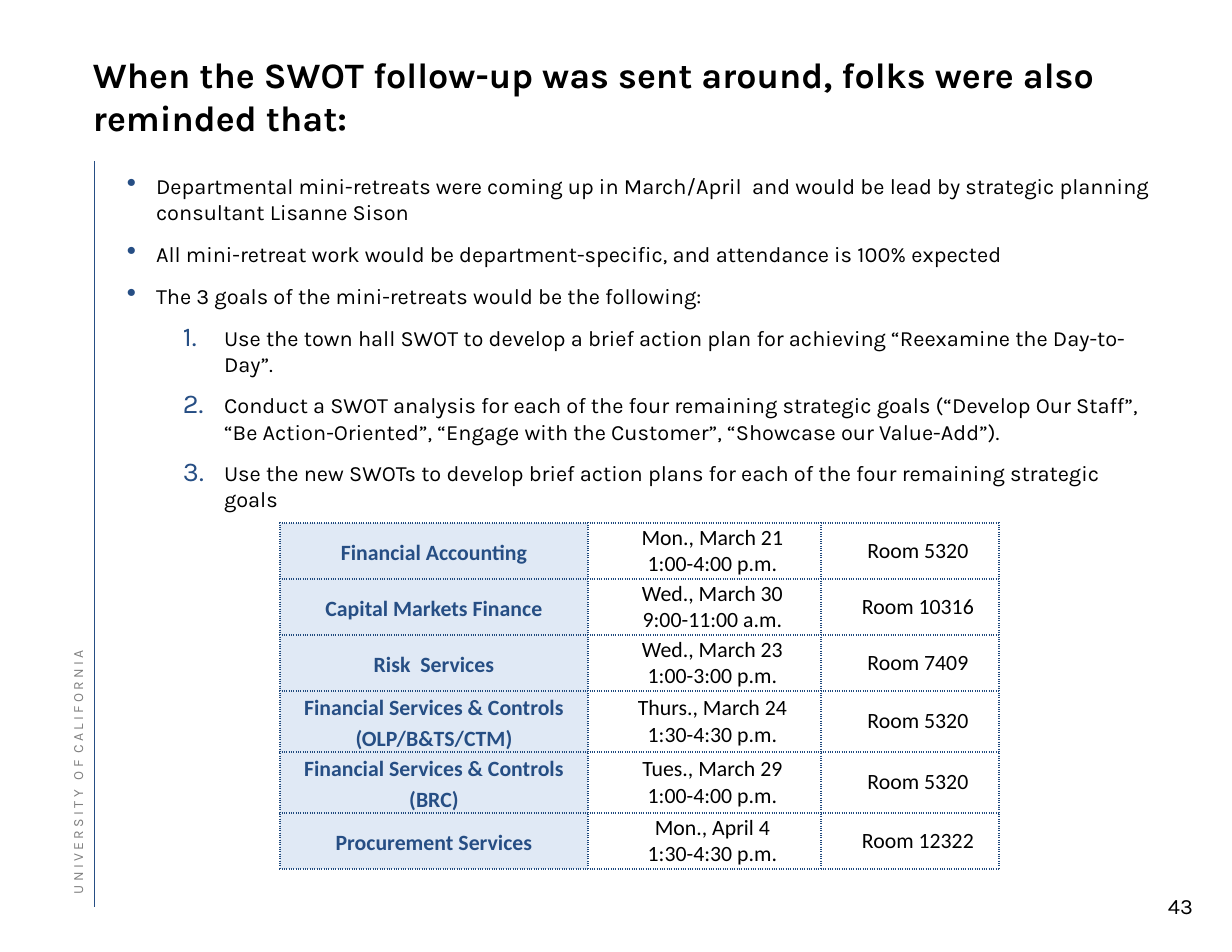
"""Build the slide on mini-retreat reminders and their schedule."""
from lxml import etree
from pptx import Presentation
from pptx.dml.color import RGBColor
from pptx.enum.shapes import MSO_CONNECTOR
from pptx.enum.text import MSO_ANCHOR, MSO_AUTO_SIZE, PP_ALIGN
from pptx.oxml.ns import qn
from pptx.util import Emu, Pt

LEFT, CENTER, RIGHT = PP_ALIGN.LEFT, PP_ALIGN.CENTER, PP_ALIGN.RIGHT
TOP, MIDDLE, BOTTOM = MSO_ANCHOR.TOP, MSO_ANCHOR.MIDDLE, MSO_ANCHOR.BOTTOM
NO_FIT = MSO_AUTO_SIZE.NONE
STRAIGHT = MSO_CONNECTOR.STRAIGHT

EMU_PER_PX = 914400 / 112
BLUE, BORDER, PALE, GREY, BLACK = "264E84", "1F497D", "E0E9F5", "808080", "000000"

TITLE = "When the SWOT follow-up was sent around, folks were also reminded that:"
REMINDERS = [
    "Departmental mini-retreats were coming up in March/April  and would be lead by "
    "strategic planning consultant Lisanne Sison",
    "All mini-retreat work would be department-specific, and attendance is 100% expected",
    "The 3 goals of the mini-retreats would be the following:",
]
GOALS = [
    "Use the town hall SWOT to develop a brief action plan for achieving "
    "“Reexamine the Day-to-Day”.",
    "Conduct a SWOT analysis for each of the four remaining strategic goals "
    "(“Develop Our Staff”, “Be Action-Oriented”, “Engage with the Customer”, "
    "“Showcase our Value-Add”).",
    "Use the new SWOTs to develop brief action plans for each of the four remaining "
    "strategic goals",
]
SCHEDULE = [
    ("Financial Accounting", "Mon., March 21\n1:00-4:00 p.m.", "Room 5320"),
    ("Capital Markets Finance", "Wed., March 30\n9:00-11:00 a.m.", "Room 10316"),
    ("Risk  Services", "Wed., March 23\n1:00-3:00 p.m.", "Room 7409"),
    ("Financial Services & Controls\n(OLP/B&TS/CTM)",
     "Thurs., March 24\n1:30-4:30 p.m.", "Room 5320"),
    ("Financial Services & Controls\n(BRC)",
     "Tues., March 29\n1:00-4:00 p.m.", "Room 5320"),
    ("Procurement Services", "Mon., April 4\n1:30-4:30 p.m.", "Room 12322"),
]
COLUMN_WIDTHS = [308, 233, 178]
ROW_HEIGHT = 56
SIDE_LABEL = "U N I V E R S I T Y   O F  C A L I F O R N I A"
PAGE_NUMBER = "43"


def px(value):
    return Emu(round(value * EMU_PER_PX))


def color(value):
    return RGBColor.from_string(value)


def apply(target, values):
    for name, value in values.items():
        setattr(target, name, value)


def place(shape, left, top, width, height):
    apply(shape, {"left": px(left), "top": px(top),
                  "width": px(width), "height": px(height)})


def set_frame(frame, margins, anchor):
    sides = ("margin_left", "margin_top", "margin_right", "margin_bottom")
    apply(frame, dict(zip(sides, map(px, margins))))
    apply(frame, {"vertical_anchor": anchor, "word_wrap": True, "auto_size": NO_FIT})


def write(paragraph, text, size, ink=BLACK, bold=False, font="Karla", **layout):
    apply(paragraph, {"space_before": Pt(0), **layout})
    run = paragraph.add_run()
    run.text = text
    apply(run.font, {"name": font, "size": Pt(size), "bold": bold})
    run.font.color.rgb = color(ink)


def add_label(slide, box, text, size, margins, anchor, **formats):
    label = slide.shapes.add_textbox(*map(px, box))
    set_frame(label.text_frame, margins, anchor)
    write(label.text_frame.paragraphs[0], text, size, **formats)
    return label


def add_rule(slide):
    rule = slide.shapes.add_connector(STRAIGHT, px(94), px(161), px(94), px(907))
    rule.line.color.rgb = color(BLUE)
    rule.line.width = Pt(0.35)
    etree.SubElement(rule._element.spPr, qn("a:effectLst"))


def set_bullet(paragraph, marker, attributes, margin, hanging):
    properties = paragraph._p.get_or_add_pPr()
    properties.set("marL", str(px(margin)))
    properties.set("indent", str(-px(hanging)))
    bullet_color = etree.SubElement(properties, qn("a:buClr"))
    etree.SubElement(bullet_color, qn("a:srgbClr"), val=BLUE)
    etree.SubElement(properties, qn("a:buSzPct"), val="125000")
    etree.SubElement(properties, qn("a:buFontTx"))
    etree.SubElement(properties, qn(marker), attributes)


def fill_body(body):
    place(body, 116, 168, 1045, 327)
    frame = body.text_frame
    set_frame(frame, (11, 5, 5, 5), TOP)
    bullet = (0, "a:buChar", {"char": "•"}, 29, 29)
    number = (1, "a:buAutoNum", {"type": "arabicPeriod"}, 97, 41)
    items = [(text, bullet) for text in REMINDERS] + [(text, number) for text in GOALS]
    for index, (text, (level, *style)) in enumerate(items):
        paragraph = frame.add_paragraph() if index else frame.paragraphs[0]
        paragraph.level = level
        set_bullet(paragraph, *style)
        write(paragraph, text, 14, space_after=Pt(10), alignment=LEFT)


def add_borders(cell):
    properties = cell._tc.get_or_add_tcPr()
    for index, side in enumerate(("a:lnL", "a:lnR", "a:lnT", "a:lnB")):
        line = etree.Element(qn(side), w=str(Pt(1)))
        fill = etree.SubElement(line, qn("a:solidFill"))
        etree.SubElement(fill, qn("a:srgbClr"), val=BORDER)
        etree.SubElement(line, qn("a:prstDash"), val="sysDot")
        properties.insert(index, line)


def fill_cell(cell, text, is_department):
    margins = {"margin_left": px(10 if is_department else 26), "margin_right": px(10),
               "margin_top": 0, "margin_bottom": 0, "vertical_anchor": MIDDLE}
    apply(cell, margins)
    if is_department:
        cell.fill.solid()
        cell.fill.fore_color.rgb = color(PALE)
    else:
        cell.fill.background()
    add_borders(cell)
    for index, line in enumerate(text.split("\n")):
        frame = cell.text_frame
        paragraph = frame.add_paragraph() if index else frame.paragraphs[0]
        write(paragraph, line, 14, BLUE if is_department else BLACK, is_department,
              "Calibri", alignment=CENTER, line_spacing=1.15 if is_department else 1.0)


def add_schedule(slide):
    rows, columns = len(SCHEDULE), len(COLUMN_WIDTHS)
    box = (280, 523, sum(COLUMN_WIDTHS), rows * ROW_HEIGHT)
    table = slide.shapes.add_table(rows, columns, *map(px, box)).table
    apply(table, {"first_row": False, "horz_banding": False})
    for column, width in zip(table.columns, COLUMN_WIDTHS):
        column.width = px(width)
    for row, texts in zip(table.rows, SCHEDULE):
        row.height = px(ROW_HEIGHT)
        for index, (cell, text) in enumerate(zip(row.cells, texts)):
            fill_cell(cell, text, index == 0)


def main():
    presentation = Presentation()
    apply(presentation, {"slide_width": px(1232), "slide_height": px(952)})
    slide = presentation.slides.add_slide(presentation.slide_layouts[1])
    title, body = slide.placeholders

    add_rule(slide)
    add_label(slide, (1148, 887, 56, 37), PAGE_NUMBER, 14, (11, 6, 11, 6), TOP,
              alignment=RIGHT)
    side_label = add_label(slide, (-165, 643, 485, 17), SIDE_LABEL, 9, (0, 0, 0, 0),
                           BOTTOM, ink=GREY, line_spacing=Pt(12))
    side_label.rotation = 270

    place(title, 93, 103, 1064, 36)
    set_frame(title.text_frame, (0, 0, 0, 0), BOTTOM)
    write(title.text_frame.paragraphs[0], TITLE, 23, bold=True, alignment=LEFT,
          line_spacing=Pt(27.9))
    fill_body(body)
    add_schedule(slide)
    presentation.save("out.pptx")


if __name__ == "__main__":
    main()
